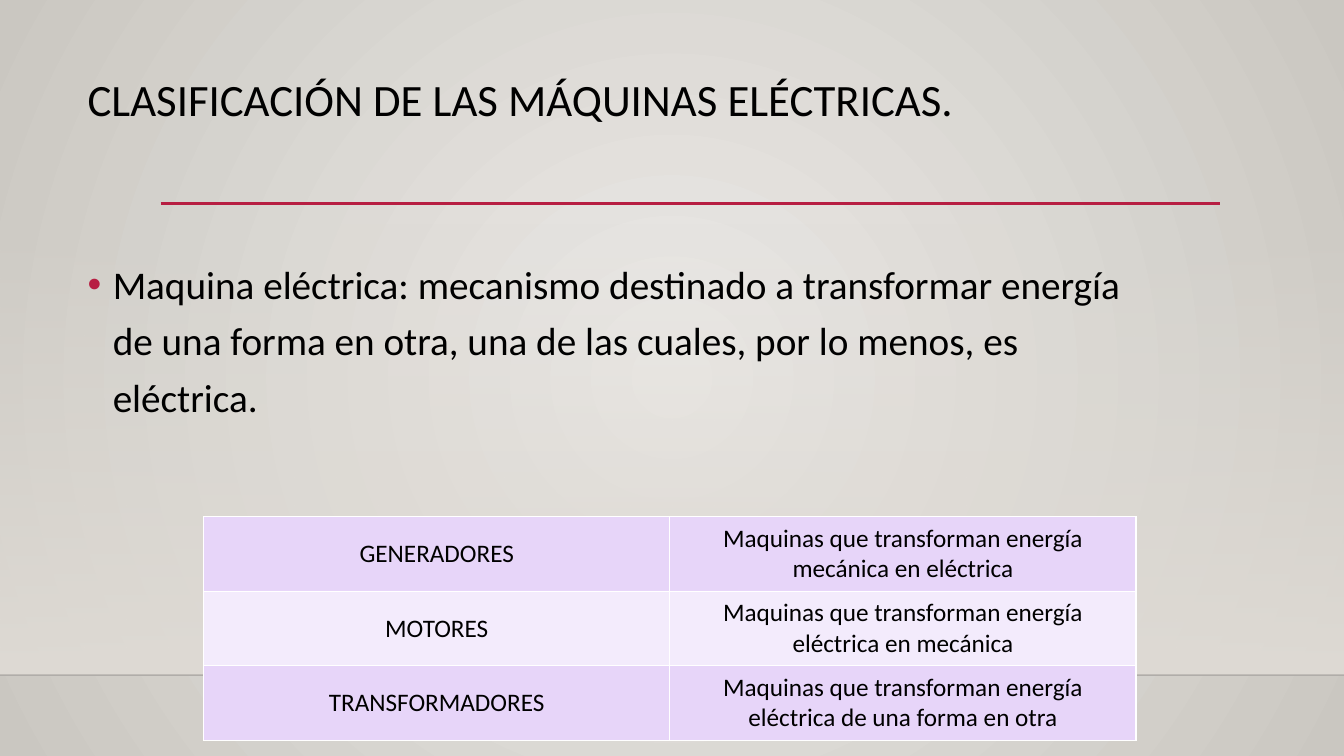
from lxml.etree import SubElement
from pptx import Presentation
from pptx.dml.color import RGBColor
from pptx.enum.shapes import MSO_CONNECTOR, MSO_SHAPE
from pptx.enum.text import MSO_ANCHOR, PP_ALIGN
from pptx.oxml import parse_xml
from pptx.oxml.ns import nsdecls, qn
from pptx.util import Pt

PX = 9525
THEME = {
    "font": "Calibri",
    "text": "000000",
    "accent": "B71E42",
    "backdrop": ("ECEAE7", "CAC7C1"),
    "wall": "DFDBD5",
    "floor_line": "000001",
    "border": "FFFFFF",
    "bands": ("E7D5F9", "F3EBFC"),
    "title_size": 32,
    "body_size": 28,
    "table_size": 18,
}


def write(frame, text, size, anchor, **paragraph_format):
    frame.word_wrap = True
    frame.vertical_anchor = anchor
    para = frame.paragraphs[0]
    for name, value in paragraph_format.items():
        setattr(para, name, value)
    span = para.add_run()
    span.text = text
    span.font.name = THEME["font"]
    span.font.size = Pt(size)
    span.font.color.rgb = RGBColor.from_string(THEME["text"])
    return para


deck = Presentation()
deck.slide_width, deck.slide_height = 1280 * PX, 720 * PX
page = deck.slides.add_slide(deck.slide_layouts[6])

# Background: light centre, darker corners
backdrop = page.background.fill
backdrop.gradient()
for stop, color in zip(backdrop.gradient_stops, THEME["backdrop"]):
    stop.color.rgb = RGBColor.from_string(color)
gradient = page.element.find(".//" + qn("a:gradFill"))
gradient.replace(gradient.find(qn("a:lin")), parse_xml(
    f'<a:path {nsdecls("a")} path="circle">'
    '<a:fillToRect l="50000" t="50000" r="50000" b="50000"/></a:path>'))

# Wall fading in towards the floor
wall = page.shapes.add_shape(MSO_SHAPE.RECTANGLE, 0, 212 * PX, 1280 * PX, 431 * PX)
wall.shadow.inherit = False
wall.line.fill.background()
wall.fill.gradient()
wall.fill.gradient_angle = 270
for stop in wall.fill.gradient_stops:
    stop.color.rgb = RGBColor.from_string(THEME["wall"])
clear_color = wall.element.find(".//" + qn("a:srgbClr"))
SubElement(clear_color, qn("a:alpha"), val="0")

# Floor edge and title rule
for left, right, y, color, width, opacity in (
    (0, 1280, 643, THEME["floor_line"], 1, 20),
    (153, 1162, 194, THEME["accent"], 2.5, 100),
):
    rule = page.shapes.add_connector(
        MSO_CONNECTOR.STRAIGHT, left * PX, y * PX, right * PX, y * PX)
    rule.line.color.rgb = RGBColor.from_string(color)
    rule.line.width = Pt(width)
    if opacity < 100:
        SubElement(rule.element.find(".//" + qn("a:srgbClr")),
                   qn("a:alpha"), val=str(opacity * 1000))
    SubElement(rule.element.spPr, qn("a:effectLst"))

title = page.shapes.add_textbox(74 * PX, 70 * PX, 977 * PX, 54 * PX)
write(title.text_frame, "CLASIFICACIÓN DE LAS MÁQUINAS ELÉCTRICAS.",
      THEME["title_size"], MSO_ANCHOR.MIDDLE, line_spacing=0.9)

definition = page.shapes.add_textbox(74 * PX, 234 * PX, 1008 * PX, 194 * PX)
para = write(
    definition.text_frame,
    "Maquina eléctrica: mecanismo destinado a transformar energía de una forma "
    "en otra, una de las cuales, por lo menos, es eléctrica.",
    THEME["body_size"], MSO_ANCHOR.TOP, line_spacing=1.2)
bullet = para._p.get_or_add_pPr()
bullet.set("marL", str(24 * PX))
bullet.set("indent", str(-24 * PX))
SubElement(SubElement(bullet, qn("a:buClr")), qn("a:srgbClr"), val=THEME["accent"])
SubElement(bullet, qn("a:buFont"), typeface="Arial")
SubElement(bullet, qn("a:buChar"), char="•")

# Machine types
machines = (
    ("GENERADORES", "Maquinas que transforman energía mecánica en eléctrica"),
    ("MOTORES", "Maquinas que transforman energía eléctrica en mecánica"),
    ("TRANSFORMADORES",
     "Maquinas que transforman energía eléctrica de una forma en otra"),
)
table = page.shapes.add_table(
    len(machines), 2, 194 * PX, 492 * PX, 888 * PX, 213 * PX).table
table.first_row = table.horz_banding = False
for row, machine in enumerate(machines):
    for column, text in enumerate(machine):
        cell = table.cell(row, column)
        write(cell.text_frame, text, THEME["table_size"], MSO_ANCHOR.MIDDLE,
              alignment=PP_ALIGN.CENTER)
        cell.vertical_anchor = MSO_ANCHOR.MIDDLE
        properties = cell._tc.get_or_add_tcPr()
        for side in ("lnL", "lnR", "lnT", "lnB"):
            border = SubElement(properties, qn(f"a:{side}"), w=str(Pt(1)))
            SubElement(SubElement(border, qn("a:solidFill")),
                       qn("a:srgbClr"), val=THEME["border"])
        cell.fill.solid()
        cell.fill.fore_color.rgb = RGBColor.from_string(THEME["bands"][row % 2])

deck.save("out.pptx")
